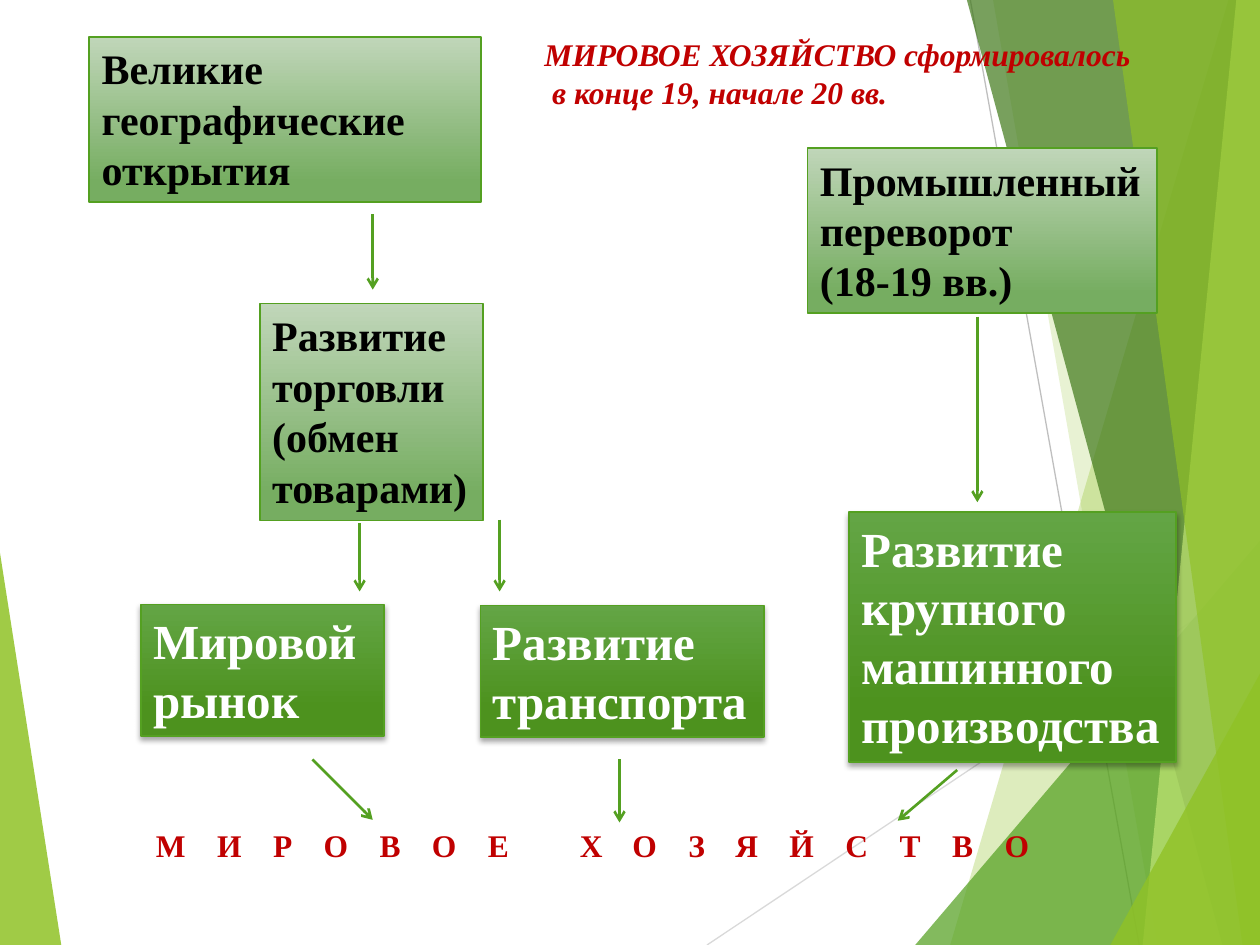
from pptx import Presentation
from pptx import util as u
from pptx.dml import color
from pptx.enum import shapes, text
from pptx.oxml.ns import qn
from lxml import etree

FONT = "Times New Roman"
GREEN, RED = "54A021", "C00000"
LIGHT = dict(stops=[(0, "C0D6B9"), (0.88, "76AD61")], size=24, ink="000000")
DARK = dict(stops=[(0, "63A545"), (0.78, "4D921E")], size=28, ink="FFFFFF", shadow=True)


def rgb(value):
    return color.RGBColor.from_string(value)


def sub(parent, tag, **attrs):
    return etree.SubElement(parent, qn(tag), {k: str(v) for k, v in attrs.items()})


def write(sp, lines, size, ink, italic=False, wrap=False, spacing=0):
    tf = sp.text_frame
    tf.word_wrap = wrap
    tf.auto_size = text.MSO_AUTO_SIZE.SHAPE_TO_FIT_TEXT
    tf.vertical_anchor = text.MSO_ANCHOR.TOP
    for i, line in enumerate(lines):
        p = tf.add_paragraph() if i else tf.paragraphs[0]
        p.alignment = text.PP_ALIGN.LEFT
        r = p.add_run()
        r.text = line
        r.font.name, r.font.size = FONT, u.Pt(size)
        r.font.bold, r.font.italic = True, italic
        r.font.color.rgb = rgb(ink)
        if spacing:
            r.font._element.set("spc", str(spacing * 100))


def label(s, x, y, w, h, lines, **fmt):
    sp = s.shapes.add_textbox(u.Pt(x), u.Pt(y), u.Pt(w), u.Pt(h))
    write(sp, lines, 18, RED, **fmt)


def card(s, x, y, w, h, lines, stops, size, ink, shadow=False, wrap=False):
    sp = s.shapes.add_shape(shapes.MSO_SHAPE.RECTANGLE, u.Pt(x), u.Pt(y), u.Pt(w), u.Pt(h))
    sp.shadow.inherit = False
    sp.fill.gradient()
    sp.fill.gradient_angle = 270
    for stop, (position, value) in zip(sp.fill.gradient_stops, stops):
        stop.position = position
        stop.color.rgb = rgb(value)
    sp.line.color.rgb = rgb(GREEN)
    sp.line.width = u.Pt(1)
    if shadow:
        effects = sp._element.spPr.find(qn("a:effectLst"))
        outer = sub(effects, "a:outerShdw", blurRad=u.Pt(3), dist=u.Pt(2),
                    dir=5400000, rotWithShape=0)
        sub(sub(outer, "a:srgbClr", val="000000"), "a:alpha", val=35000)
    write(sp, lines, size, ink, wrap=wrap)


def line(s, x1, y1, x2, y2, value, width):
    c = s.shapes.add_connector(shapes.MSO_CONNECTOR.STRAIGHT,
                               u.Pt(x1), u.Pt(y1), u.Pt(x2), u.Pt(y2))
    c.line.color.rgb = rgb(value)
    c.line.width = u.Pt(width)
    sub(c._element.spPr, "a:effectLst")
    return c


def arrow(s, x1, y1, x2, y2):
    c = line(s, x1, y1, x2, y2, GREEN, 1.5)
    sub(c.line._get_or_add_ln(), "a:tailEnd", type="arrow")


def facet(s, points, value, alpha):
    fb = s.shapes.build_freeform(u.Pt(points[0][0]), u.Pt(points[0][1]))
    fb.add_line_segments([(u.Pt(x), u.Pt(y)) for x, y in points[1:]], close=True)
    sp = fb.convert_to_shape()
    sp.shadow.inherit = False
    sp.fill.solid()
    sp.fill.fore_color.rgb = rgb(value)
    sub(sp._element.spPr.find(qn("a:solidFill"))[0], "a:alpha", val=alpha * 1000)
    sp.line.fill.background()


def backdrop(s, x, y, w, h):
    right, bottom = x + w, y + h
    facet(s, [(x, y + 316), (x + 35, bottom), (x, bottom)], "90C226", 85)
    line(s, x + 404, bottom, right, y + 329, "D9D9D9", 0.75)
    line(s, x + 554.5, y, x + 651, bottom, "BFBFBF", 0.75)
    bands = [
        (702, 543, "90C226", 30),
        (567.5, 661.5, "90C226", 20),
        (None, 523, "54A021", 72),
        (552.5, 698.5, "3F7819", 70),
        (706.5, 653, "C0E474", 70),
        (636, 710, "90C226", 65),
        (None, 634.5, "90C226", 80),
    ]
    corner_tops = iter([309, 385])
    for top, foot, value, alpha in bands:
        if top is None:
            points = [(x + foot, bottom), (right, y + next(corner_tops)), (right, bottom)]
        else:
            points = [(x + top, y), (x + foot, bottom), (right, bottom), (right, y)]
        facet(s, points, value, alpha)


def trade_branch(s, x, y):
    card(s, x, y, 224, 94.5, ["Великие", "географические", "открытия"], wrap=True, **LIGHT)
    arrow(s, x + 162, y + 101.5, x + 162, y + 144.5)
    card(s, x + 97.5, y + 152.5, 127.5, 124,
         ["Развитие", "торговли", "(обмен", "товарами)"], **LIGHT)
    arrow(s, x + 154.5, y + 278, x + 154.5, y + 317)
    arrow(s, x + 234.5, y + 276, x + 234.5, y + 317)
    card(s, x + 29.5, y + 324.5, 139, 75, ["Мировой", "рынок"], **DARK)
    card(s, x + 223.5, y + 325, 162, 75, ["Развитие", "транспорта"], **DARK)
    arrow(s, x + 127.5, y + 413, x + 162, y + 447.5)
    arrow(s, x + 303, y + 413, x + 303, y + 449)


def industry_branch(s, x, y):
    card(s, x, y, 199.5, 94.5, ["Промышленный", "переворот", "(18-19 вв.)"], **LIGHT)
    arrow(s, x + 97, y + 96.5, x + 97, y + 202.5)
    card(s, x + 23.5, y + 208, 187, 143,
         ["Развитие", "крупного", "машинного", "производства"], **DARK)
    arrow(s, x + 85.5, y + 355.5, x + 51.5, y + 384.5)


def captions(s, x, y):
    label(s, x + 222, y, 353, 51,
          ["МИРОВОЕ ХОЗЯЙСТВО сформировалось", " в конце 19, начале 20 вв."], italic=True)
    label(s, x, y + 452, 592.5, 29, ["МИРОВОЕ ХОЗЯЙСТВО"], wrap=True, spacing=18)


def main():
    prs = Presentation()
    prs.slide_width, prs.slide_height = u.Pt(720), u.Pt(540)
    s = prs.slides.add_slide(prs.slide_layouts[6])
    backdrop(s, 0, 0, 720, 540)
    trade_branch(s, 51, 21)
    industry_branch(s, 461.5, 84.5)
    captions(s, 82, 16.5)
    prs.save("out.pptx")


if __name__ == "__main__":
    main()
